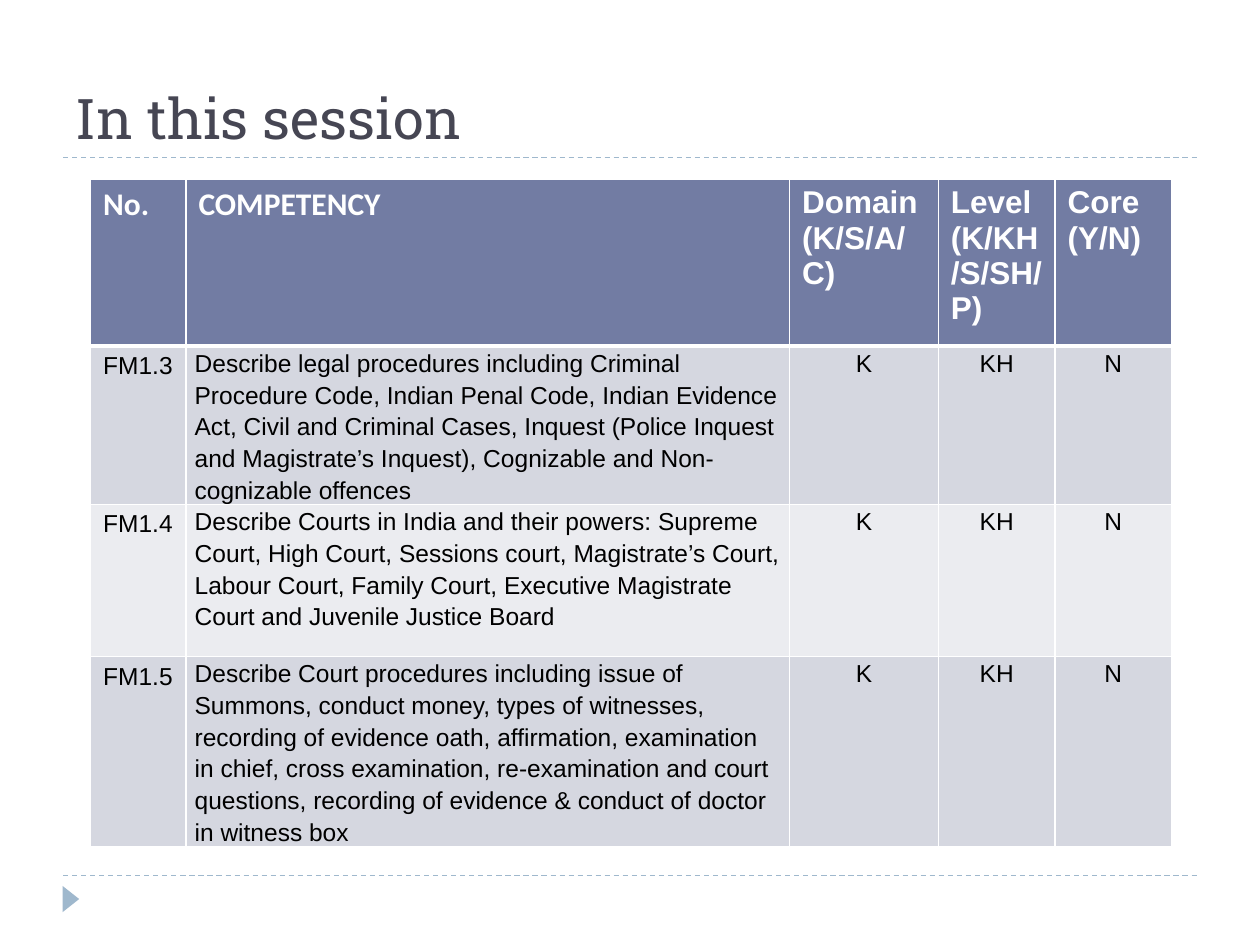
from lxml.etree import SubElement
from pptx import Presentation
from pptx.dml.color import RGBColor
from pptx.enum.dml import MSO_LINE
from pptx.enum.shapes import MSO_CONNECTOR, MSO_SHAPE
from pptx.enum.text import MSO_ANCHOR, MSO_AUTO_SIZE, PP_ALIGN
from pptx.oxml.ns import qn
from pptx.util import Pt

COLORS = {
    "title": "464653",
    "accent": "9FB8CD",
    "header": "727CA3",
    "odd": "D5D7E0",
    "even": "EBECF0",
    "white": "FFFFFF",
    "black": "000000",
}
HEADERS = ["No.", "COMPETENCY", "Domain (K/S/A/C)", "Level (K/KH/S/SH/P)", "Core (Y/N)"]
COMPETENCIES = [
    ("FM1.3", "Describe legal procedures including Criminal Procedure Code, Indian Penal Code, "
     "Indian Evidence Act, Civil and Criminal Cases, Inquest (Police Inquest and Magistrate’s "
     "Inquest), Cognizable and Non-cognizable offences"),
    ("FM1.4", "Describe Courts in India and their powers: Supreme Court, High Court, Sessions "
     "court, Magistrate’s Court, Labour Court, Family Court, Executive Magistrate Court and "
     "Juvenile Justice Board"),
    ("FM1.5", "Describe Court procedures including issue of Summons, conduct money, types of "
     "witnesses, recording of evidence oath, affirmation, examination in chief, cross "
     "examination, re-examination and court questions, recording of evidence & conduct of "
     "doctor in witness box"),
]
RATINGS = ("K", "KH", "N")
COLUMN_WIDTHS = [54.5, 345, 85, 66.75, 66.5]
ROW_HEIGHTS = [95.5, 90, 87, 108]


def color(name):
    return RGBColor.from_string(COLORS[name])


def style_font(paragraph, face, size, color_name, bold=False):
    font = paragraph.font
    font.name = face
    font.size = Pt(size)
    font.bold = bold
    font.color.rgb = color(color_name)


def add_title(page, text):
    title = page.shapes.title
    title.left, title.top, title.width, title.height = Pt(36), Pt(12), Pt(648), Pt(78)
    frame = title.text_frame
    frame.text = text
    frame.auto_size = MSO_AUTO_SIZE.NONE
    frame.vertical_anchor = MSO_ANCHOR.BOTTOM
    paragraph = frame.paragraphs[0]
    paragraph.alignment = PP_ALIGN.LEFT
    style_font(paragraph, "Roboto Slab", 32, "title")


def add_rule(page, top):
    rule = page.shapes.add_connector(MSO_CONNECTOR.STRAIGHT, Pt(36), Pt(top), Pt(684), Pt(top))
    rule.line.color.rgb = color("accent")
    rule.line.width = Pt(0.75)
    rule.line.dash_style = MSO_LINE.DASH
    SubElement(rule._element.spPr, qn("a:effectLst"))


def add_marker(page):
    marker = page.shapes.add_shape(
        MSO_SHAPE.ISOSCELES_TRIANGLE, Pt(33), Pt(509), Pt(15), Pt(9.5))
    marker.rotation = 90
    marker.shadow.inherit = False
    marker.fill.solid()
    marker.fill.fore_color.rgb = color("accent")
    marker.line.fill.background()


def set_borders(cell, top=1, bottom=1):
    properties = cell._tc.get_or_add_tcPr()
    widths = {"a:lnL": 1, "a:lnR": 1, "a:lnT": top, "a:lnB": bottom}
    for position, (tag, width) in enumerate(widths.items()):
        border = SubElement(properties, qn(tag), w=str(Pt(width)))
        fill = SubElement(border, qn("a:solidFill"))
        SubElement(fill, qn("a:srgbClr"), val=COLORS["white"])
        properties.insert(position, border)


def fill_cell(cell, text, fill_name):
    cell.text = text
    cell.fill.solid()
    cell.fill.fore_color.rgb = color(fill_name)
    return cell.text_frame.paragraphs[0]


def fill_header(table):
    for column, text in enumerate(HEADERS):
        cell = table.cell(0, column)
        paragraph = fill_cell(cell, text, "header")
        style_font(paragraph, "Calibri" if column < 2 else "Arial", 18, "white", True)
        set_borders(cell, bottom=3)


def fill_row(table, row, texts):
    for column, text in enumerate(texts):
        cell = table.cell(row, column)
        paragraph = fill_cell(cell, text, "odd" if row % 2 else "even")
        if column > 0:
            cell.margin_left = cell.margin_right = Pt(5)
            cell.margin_top = cell.margin_bottom = 0
            paragraph.line_spacing = 1.15
        if column > 1:
            paragraph.alignment = PP_ALIGN.CENTER
        style_font(paragraph, "Arial", 14, "black")
        set_borders(cell, top=3 if row == 1 else 1)


def add_competency_table(page):
    table = page.shapes.add_table(
        len(ROW_HEIGHTS), len(COLUMN_WIDTHS), Pt(51.75), Pt(102.25),
        Pt(sum(COLUMN_WIDTHS)), Pt(sum(ROW_HEIGHTS))).table
    for column, width in zip(table.columns, COLUMN_WIDTHS):
        column.width = Pt(width)
    for row, height in zip(table.rows, ROW_HEIGHTS):
        row.height = Pt(height)
    fill_header(table)
    for row, competency in enumerate(COMPETENCIES, 1):
        fill_row(table, row, competency + RATINGS)


def main():
    deck = Presentation()
    deck.slide_width, deck.slide_height = Pt(720), Pt(540)
    page = deck.slides.add_slide(deck.slide_layouts[5])
    for top in (500.25, 90):
        add_rule(page, top)
    add_marker(page)
    add_title(page, "In this session")
    add_competency_table(page)
    deck.save("out.pptx")


if __name__ == "__main__":
    main()
